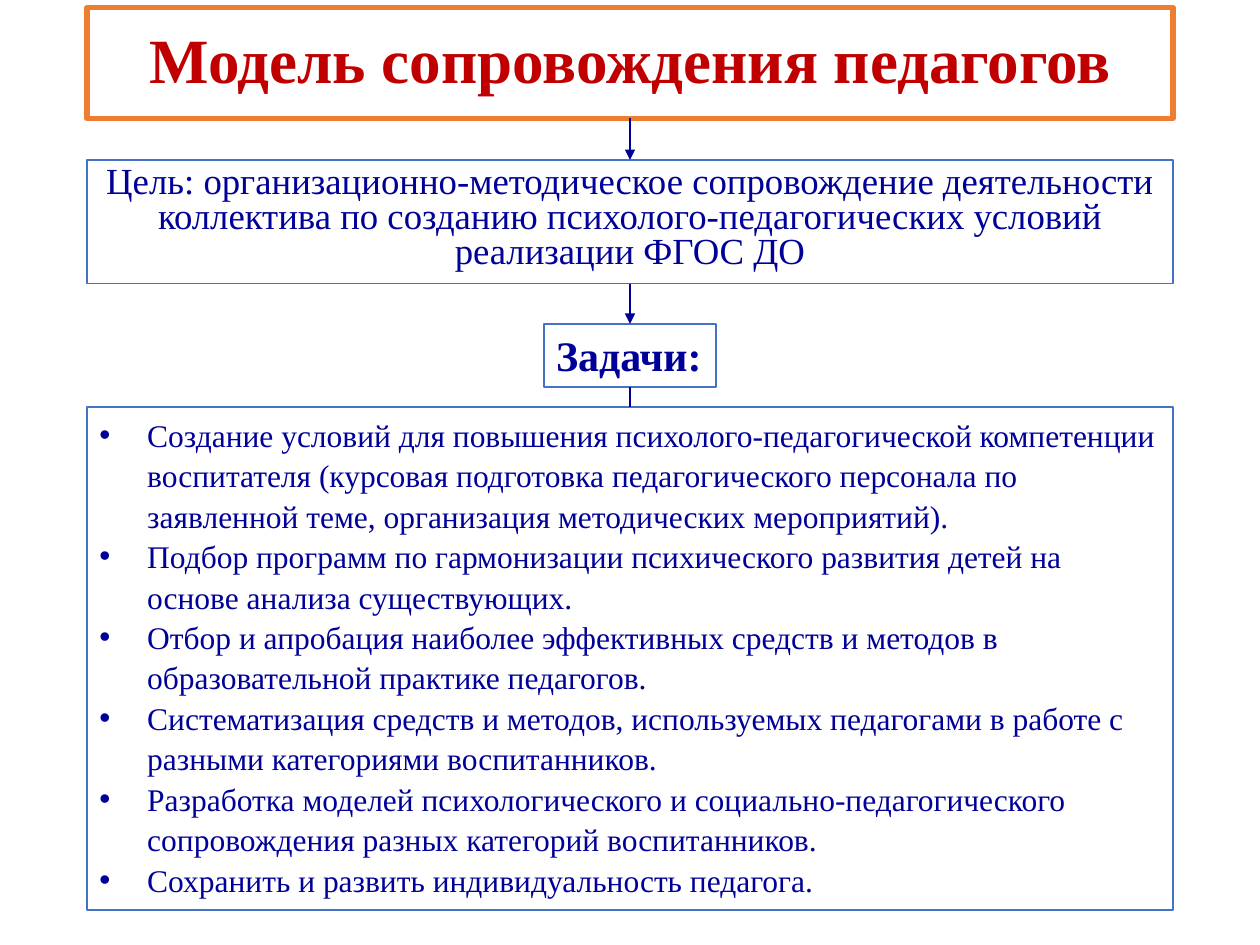
import pptx
import pptx.util
import pptx.dml.color
import pptx.enum.shapes
import pptx.enum.text
import pptx.oxml.ns
import lxml.etree

COLORS = {"white": "FFFFFF", "orange": "ED7D31", "blue": "4472C4",
          "red": "C00000", "navy": "000099"}
FONT = "Times New Roman"
COLS, ROWS = 100, 75
LEFT, WIDTH = 6.9, 86.2
LABEL_WIDTH = 13.7
TOP, BOTTOM = 0, 2  # connection sites of a rectangle

ALIGN = pptx.enum.text.PP_ALIGN
ANCHOR = pptx.enum.text.MSO_ANCHOR
FIT = pptx.enum.text.MSO_AUTO_SIZE

TASKS = [
    "Создание условий для повышения психолого-педагогической компетенции "
    "воспитателя (курсовая подготовка педагогического персонала по "
    "заявленной теме, организация методических мероприятий).",
    "Подбор программ по гармонизации психического развития детей на основе "
    "анализа существующих.",
    "Отбор и апробация наиболее эффективных средств и методов в "
    "образовательной практике педагогов.",
    "Систематизация средств и методов, используемых педагогами в работе с "
    "разными категориями воспитанников.",
    "Разработка моделей психологического и социально-педагогического "
    "сопровождения разных категорий воспитанников.",
    "Сохранить и развить индивидуальность педагога.",
]


def rgb(name):
    return pptx.dml.color.RGBColor.from_string(COLORS[name])


def add_child(parent, tag, **attrs):
    return lxml.etree.SubElement(parent, pptx.oxml.ns.qn(tag), **attrs)


class Scheme:
    """Draws boxes and connectors on a slide measured in grid columns and rows."""

    def __init__(self, prs):
        self.slide = prs.slides.add_slide(prs.slide_layouts[6])
        self.col = prs.slide_width / COLS
        self.row = prs.slide_height / ROWS

    def box(self, x, y, w, h, line="blue", weight=1):
        sp = self.slide.shapes.add_shape(
            pptx.enum.shapes.MSO_SHAPE.RECTANGLE,
            round(x * self.col), round(y * self.row),
            round(w * self.col), round(h * self.row))
        sp.shadow.inherit = False
        sp.fill.solid()
        sp.fill.fore_color.rgb = rgb("white")
        sp.line.color.rgb = rgb(line)
        sp.line.width = pptx.util.Pt(weight)
        return sp

    def text(self, sp, paragraphs, size, color="navy", bold=False, align=ALIGN.LEFT,
             anchor=ANCHOR.TOP, spacing=1.0, wrap=True, fit=FIT.NONE, bullets=False):
        tf = sp.text_frame
        tf.word_wrap = wrap
        tf.auto_size = fit
        tf.vertical_anchor = anchor
        for i, words in enumerate(paragraphs):
            p = tf.add_paragraph() if i else tf.paragraphs[0]
            p.alignment = align
            p.line_spacing = spacing
            if bullets:
                self.bullet(p)
            r = p.add_run()
            r.text = words
            r.font.name = FONT
            r.font.size = pptx.util.Pt(size)
            r.font.bold = bold
            r.font.color.rgb = rgb(color)

    def bullet(self, p):
        indent = pptx.util.Inches(0.38)
        pPr = p._p.get_or_add_pPr()
        pPr.set("marL", str(indent))
        pPr.set("indent", str(-indent))
        add_child(pPr, "a:buFont", typeface="Arial")
        add_child(pPr, "a:buChar", char="•")

    def link(self, upper, lower, arrow=True):
        """Join the bottom of one box to the top of the next."""
        cn = self.slide.shapes.add_connector(
            pptx.enum.shapes.MSO_CONNECTOR.STRAIGHT, 0, 0, 0, 0)
        cn.begin_connect(upper, BOTTOM)
        cn.end_connect(lower, TOP)
        cn.line.color.rgb = rgb("navy")
        cn.line.width = pptx.util.Pt(1.5)
        if arrow:
            add_child(cn.line._get_or_add_ln(), "a:tailEnd", type="triangle")
        add_child(cn._element.spPr, "a:effectLst")


def main():
    prs = pptx.Presentation()
    prs.slide_width = pptx.util.Inches(10)
    prs.slide_height = pptx.util.Inches(7.5)
    s = Scheme(prs)

    title = s.box(LEFT, 0.6, WIDTH, 8.8, line="orange", weight=3)
    s.text(title, ["Модель сопровождения педагогов"], 36, color="red", bold=True,
           align=ALIGN.CENTER, anchor=ANCHOR.MIDDLE, spacing=0.9)

    goal = s.box(LEFT, 12.7, WIDTH, 9.8)
    s.text(goal, ["Цель: организационно-методическое сопровождение деятельности "
                  "коллектива по созданию психолого-педагогических условий "
                  "реализации ФГОС ДО"], 21, align=ALIGN.CENTER, spacing=0.8)

    tasks = s.box(LEFT, 32.3, WIDTH, 39.9)
    s.text(tasks, TASKS, 18, spacing=1.07, fit=FIT.SHAPE_TO_FIT_TEXT, bullets=True)

    label = s.box((COLS - LABEL_WIDTH) / 2, 25.7, LABEL_WIDTH, 5)
    s.text(label, ["Задачи:"], 24, bold=True, wrap=False, fit=FIT.SHAPE_TO_FIT_TEXT)

    s.link(title, goal)
    s.link(goal, label)
    s.link(label, tasks, arrow=False)

    prs.save("out.pptx")


if __name__ == "__main__":
    main()
